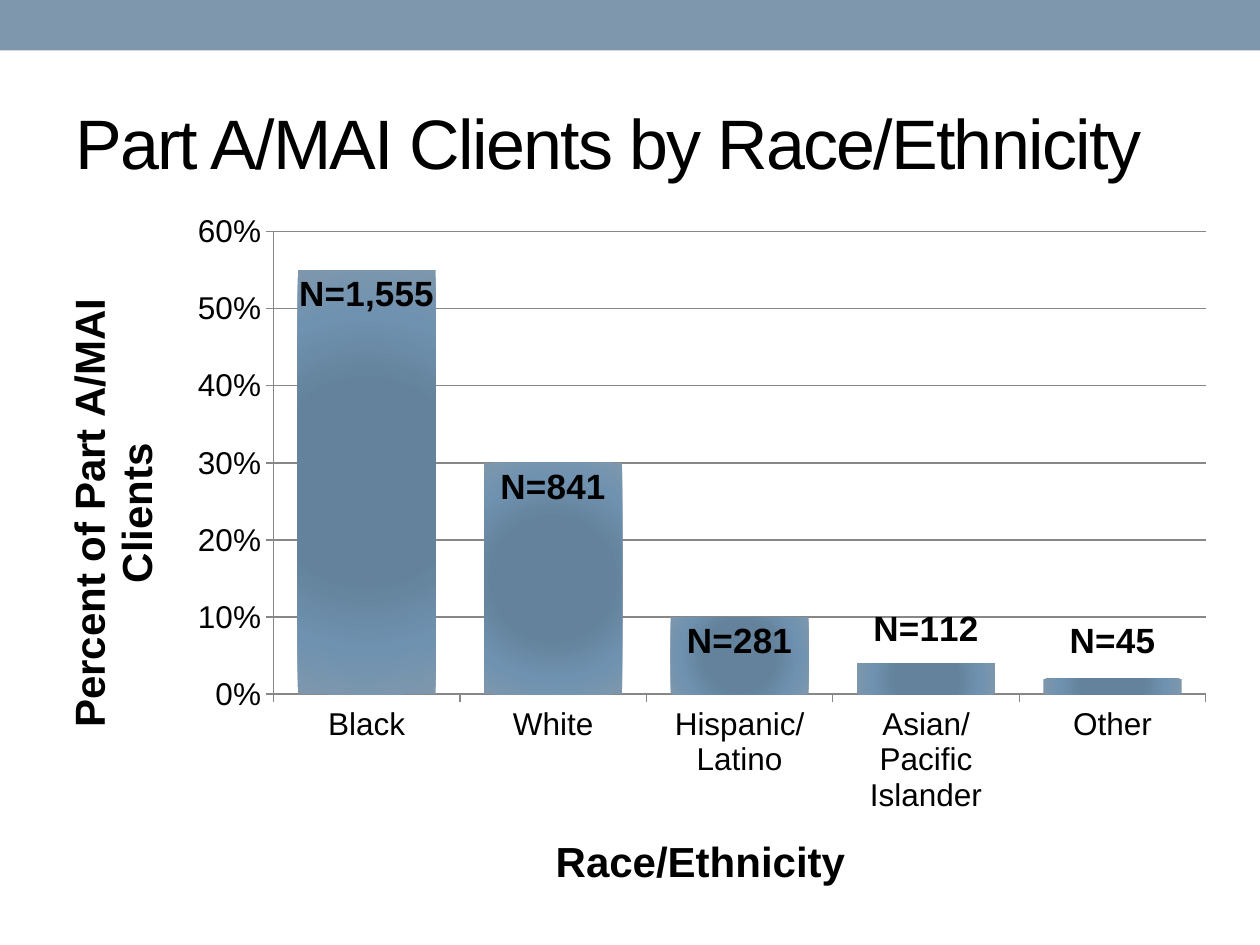
from lxml import etree
from pptx import Presentation
from pptx.chart.data import CategoryChartData
from pptx.dml.color import RGBColor
from pptx.enum.chart import XL_CHART_TYPE, XL_LABEL_POSITION, XL_TICK_MARK
from pptx.enum.shapes import MSO_SHAPE
from pptx.enum.text import MSO_ANCHOR
from pptx.oxml import parse_xml
from pptx.oxml.ns import nsdecls, qn
from pptx.util import Inches, Pt

STACKED = XL_CHART_TYPE.COLUMN_STACKED
INSIDE_END = XL_LABEL_POSITION.INSIDE_END
OUTSIDE = XL_TICK_MARK.OUTSIDE
MIDDLE = MSO_ANCHOR.MIDDLE
RECT = MSO_SHAPE.RECTANGLE

TITLE = "Part A/MAI Clients by Race/Ethnicity"
X_TITLE = "Race/Ethnicity"
Y_TITLE = "Percent of Part A/MAI Clients"
FONT, BLACK, BLUE, GRAY = "Arial", "000000", "7E97AD", "878787"
BAR_STOPS = [(0, "64829B"), (45, "64829B"), (75, "6F92B0"), (100, BLUE)]
CHART_W, CHART_H = 9.5, 5.72
GROUPS = [
    ("Black", 0.55, "N=1,555", 0),
    ("White", 0.3, "N=841", 0),
    ("Hispanic/Latino", 0.1, "N=281", 0),
    ("Asian/Pacific Islander", 0.04, "N=112", -0.46),
    ("Other", 0.02, "N=45", -0.49),
]


def color(value):
    return RGBColor.from_string(value)


def style(font, size, bold=False):
    font.name, font.size, font.bold = FONT, Pt(size), bold
    font.color.rgb = color(BLACK)


def set_layout(parent, after, x, y, size=None, edge=True):
    for old in parent.findall(qn("c:layout")):
        parent.remove(old)
    items = [("layoutTarget", "inner")] if size else []
    if edge:
        items += [("xMode", "edge"), ("yMode", "edge")]
    items += [("x", x / CHART_W), ("y", y / CHART_H)]
    if size:
        items += [("w", size[0] / CHART_W), ("h", size[1] / CHART_H)]
    root = etree.Element(qn("c:layout"))
    manual = etree.SubElement(root, qn("c:manualLayout"))
    for tag, value in items:
        etree.SubElement(manual, qn("c:" + tag)).set("val", str(value))
    if after:
        parent.find(qn(after)).addnext(root)
    else:
        parent.insert(0, root)


def format_axis(axis, title, x, y):
    axis.major_tick_mark = OUTSIDE
    axis.format.line.color.rgb = color(GRAY)
    style(axis.tick_labels.font, 18)
    tf = axis.axis_title.text_frame
    tf.text = title
    style(tf.paragraphs[0].runs[0].font, 24, True)
    set_layout(axis.axis_title._element, "c:tx", x, y)


def radial_fill(series):
    series.format.fill.solid()
    old = series._element.spPr.find(qn("a:solidFill"))
    stops = "".join(
        f'<a:gs pos="{pos * 1000}"><a:srgbClr val="{value}"/></a:gs>'
        for pos, value in BAR_STOPS
    )
    old.getparent().replace(old, parse_xml(
        f'<a:gradFill {nsdecls("a")} rotWithShape="1"><a:gsLst>{stops}</a:gsLst>'
        '<a:path path="circle"><a:fillToRect l="50000" t="50000" r="50000" b="50000"/>'
        '</a:path></a:gradFill>'
    ))


def hide_leader_lines(dLbls):
    for line in dLbls.findall(qn("c:showLeaderLines")):
        line.set("val", "0")
    dLbls.append(parse_xml(
        f'<c:extLst {nsdecls("c")}><c:ext uri="{{CE6537A1-D6FC-4f65-9D91-7224C49458BB}}" '
        'xmlns:c15="http://schemas.microsoft.com/office/drawing/2012/chart">'
        '<c15:showLeaderLines val="0"/></c:ext></c:extLst>'
    ))


def add_header(slide):
    bar = slide.shapes.add_shape(RECT, 0, 0, Inches(10), Inches(0.4))
    bar.shadow.inherit = False
    bar.fill.solid()
    bar.fill.fore_color.rgb = color(BLUE)
    bar.line.fill.background()
    tf = slide.shapes.add_textbox(
        Inches(0.5), Inches(0.58), Inches(9.25), Inches(1.08)).text_frame
    tf.word_wrap = True
    tf.vertical_anchor = MIDDLE
    tf.text = TITLE
    r = tf.paragraphs[0].runs[0]
    style(r.font, 40)
    r.font._element.set("spc", "-100")


def add_clients_chart(slide):
    data = CategoryChartData(number_format="0%")
    data.categories = [group[0] for group in GROUPS]
    data.add_series("Series 1", [group[1] for group in GROUPS])
    chart = slide.shapes.add_chart(
        STACKED, Inches(0.25), Inches(1.58), Inches(CHART_W), Inches(CHART_H), data).chart
    style(chart.font, 18)
    chart.has_legend = False
    chart.has_title = False
    set_layout(chart._chartSpace.chart.plotArea, None, 1.92, 0.26, (7.4, 3.67))

    format_axis(chart.category_axis, X_TITLE, 4.1, 4.98)
    axis = chart.value_axis
    format_axis(axis, Y_TITLE, 0.18, 0.73)
    axis.minimum_scale, axis.maximum_scale, axis.major_unit = 0, 0.6, 0.1
    axis.tick_labels.number_format = "0%"
    axis.tick_labels.number_format_is_linked = False
    axis.has_major_gridlines = True
    axis.major_gridlines.format.line.color.rgb = color(GRAY)

    plot = chart.plots[0]
    plot.gap_width, plot.overlap, plot.vary_by_categories = 35, 100, False
    series = plot.series[0]
    radial_fill(series)
    for i, (_, _, count, shift) in enumerate(GROUPS):
        label = series.points[i].data_label
        label.text_frame.text = count
        style(label.text_frame.paragraphs[0].runs[0].font, 20, True)
        label.position = INSIDE_END
        if shift:
            dLbl = series._element.find(qn("c:dLbls")).findall(qn("c:dLbl"))[i]
            set_layout(dLbl, "c:idx", 0, shift, edge=False)
    hide_leader_lines(series._element.find(qn("c:dLbls")))


def main():
    prs = Presentation()
    prs.slide_width, prs.slide_height = Inches(10), Inches(7.5)
    slide = prs.slides.add_slide(prs.slide_layouts[6])
    add_header(slide)
    add_clients_chart(slide)
    prs.save("out.pptx")


if __name__ == "__main__":
    main()
